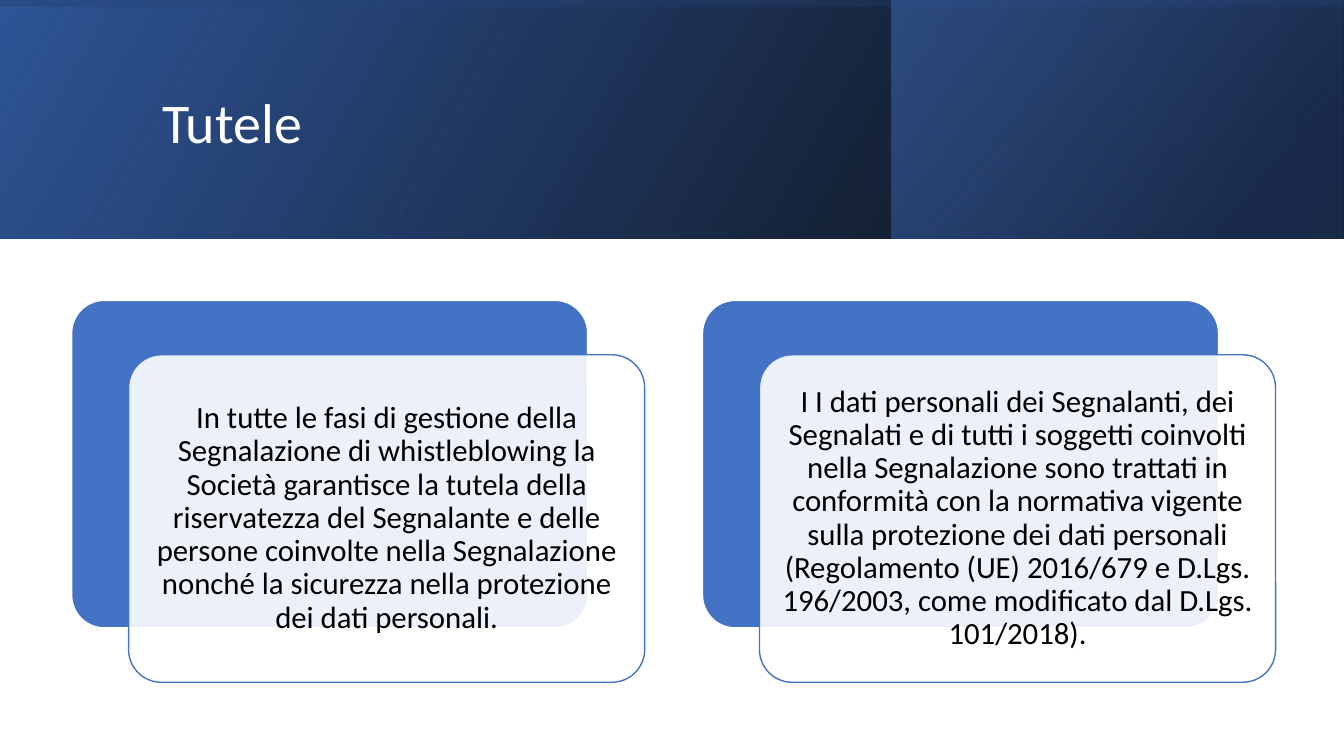
from lxml import etree
from pptx import Presentation
from pptx.dml.color import RGBColor
from pptx.enum.shapes import MSO_SHAPE
from pptx.enum.text import MSO_ANCHOR, PP_ALIGN
from pptx.oxml.ns import qn
from pptx.util import Inches, Pt

RECTANGLE = MSO_SHAPE.RECTANGLE
ROUNDED = MSO_SHAPE.ROUNDED_RECTANGLE
MIDDLE = MSO_ANCHOR.MIDDLE
LEFT, CENTER = PP_ALIGN.LEFT, PP_ALIGN.CENTER

COLORS = {
    "white": "FFFFFF",
    "black": "000000",
    "blue": "4472C4",
    "deep blue": "2F5597",
    "navy": "203864",
}
FONT = "Calibri"

# Boxes are (left, top, width, height) in percent of the slide's size.
HEADER_HEIGHT = 31.6
TITLE_BOX = (11.33, 5.07, 79.74, 22.93)
CARD_LEFT, CARD_TOP = 5.33, 39.73
CARD_WIDTH, CARD_HEIGHT = 38.4, 43.33
CARD_PITCH = 46.94
FRONT_SHIFT_X, FRONT_SHIFT_Y = 4.24, 7.2
TEXT_MARGIN_X, TEXT_MARGIN_Y = 0.71, 1.27

CARD_TEXTS = [
    "In tutte le fasi di gestione della Segnalazione di whistleblowing la "
    "Società garantisce la tutela della riservatezza del Segnalante e delle "
    "persone coinvolte nella Segnalazione nonché la sicurezza nella "
    "protezione dei dati personali.",
    "I I dati personali dei Segnalanti, dei Segnalati e di tutti i soggetti "
    "coinvolti nella Segnalazione sono trattati in conformità con la "
    "normativa vigente sulla protezione dei dati personali (Regolamento (UE) "
    "2016/679 e D.Lgs. 196/2003, come modificato dal D.Lgs. 101/2018).",
]


class SlideBuilder:
    def __init__(self, presentation):
        self.width = presentation.slide_width
        self.height = presentation.slide_height
        self.slide = presentation.slides.add_slide(presentation.slide_layouts[6])

    def place(self, box):
        left, top, width, height = box
        return (int(left * self.width / 100), int(top * self.height / 100),
                int(width * self.width / 100), int(height * self.height / 100))

    def color(self, name):
        return RGBColor.from_string(COLORS[name])

    def set_opacity(self, shape, opacities):
        for element, opacity in zip(shape._element.iter(qn("a:srgbClr")), opacities):
            if opacity < 100:
                etree.SubElement(element, qn("a:alpha"), val=str(opacity * 1000))

    def gradient_panel(self, box, stops, angle, turned=False):
        """Mirrored gradient rectangle; stops are (position, color, opacity)."""
        left, top, width, height = self.place(box)
        if turned:
            left, top = left + (width - height) // 2, top + (height - width) // 2
            width, height = height, width
        shape = self.slide.shapes.add_shape(RECTANGLE, left, top, width, height)
        shape.shadow.inherit = False
        shape.rotation = 270 if turned else 0
        shape._element.spPr.find(qn("a:xfrm")).set("flipH", "1")
        shape.fill.gradient()
        shape.fill.gradient_angle = 360 - angle
        for stop, (position, name, _) in zip(shape.fill.gradient_stops, stops):
            stop.position = position / 100
            stop.color.rgb = self.color(name)
        self.set_opacity(shape, [opacity for _, _, opacity in stops])
        shape.line.fill.background()

    def rounded_card(self, box, fill, line, opacity=100):
        shape = self.slide.shapes.add_shape(ROUNDED, *self.place(box))
        shape.shadow.inherit = False
        shape.adjustments[0] = 0.1
        shape.fill.solid()
        shape.fill.fore_color.rgb = self.color(fill)
        self.set_opacity(shape, [opacity])
        shape.line.color.rgb = self.color(line)
        shape.line.width = Pt(1)

    def text(self, box, wording, size, color, alignment, margins=(0.1, 0.05)):
        text_frame = self.slide.shapes.add_textbox(*self.place(box)).text_frame
        text_frame.word_wrap = True
        text_frame.vertical_anchor = MIDDLE
        text_frame.margin_left = text_frame.margin_right = Inches(margins[0])
        text_frame.margin_top = text_frame.margin_bottom = Inches(margins[1])
        text_frame.text = wording
        paragraph = text_frame.paragraphs[0]
        paragraph.alignment = alignment
        paragraph.line_spacing = 0.9
        font = paragraph.runs[0].font
        font.name, font.size = FONT, Pt(size)
        font.color.rgb = self.color(color)


def main():
    presentation = Presentation()
    presentation.slide_width = Inches(13.33)
    presentation.slide_height = Inches(7.5)
    builder = SlideBuilder(presentation)

    # Header band: three layered gradients
    header = (0, 0, 100, HEADER_HEIGHT)
    builder.gradient_panel(header, [(0, "black", 96), (100, "deep blue", 100)], 330)
    builder.gradient_panel((66.3, 0, 33.65, HEADER_HEIGHT),
                           [(19, "navy", 68), (100, "blue", 48)], 320)
    builder.gradient_panel(header, [(23, "deep blue", 16), (99, "black", 45)],
                           350, turned=True)

    # Title
    builder.text(TITLE_BOX, "Tutele", 40, "white", LEFT)

    # Cards: blue back, translucent front, text
    for index, wording in enumerate(CARD_TEXTS):
        left = CARD_LEFT + index * CARD_PITCH
        front_left, front_top = left + FRONT_SHIFT_X, CARD_TOP + FRONT_SHIFT_Y
        builder.rounded_card((left, CARD_TOP, CARD_WIDTH, CARD_HEIGHT),
                             "blue", "white")
        builder.rounded_card((front_left, front_top, CARD_WIDTH, CARD_HEIGHT),
                             "white", "blue", opacity=90)
        builder.text((front_left + TEXT_MARGIN_X, front_top + TEXT_MARGIN_Y,
                      CARD_WIDTH - 2 * TEXT_MARGIN_X,
                      CARD_HEIGHT - 2 * TEXT_MARGIN_Y),
                     wording, 22, "black", CENTER, margins=(0.09, 0.09))

    presentation.save("out.pptx")


if __name__ == "__main__":
    main()
